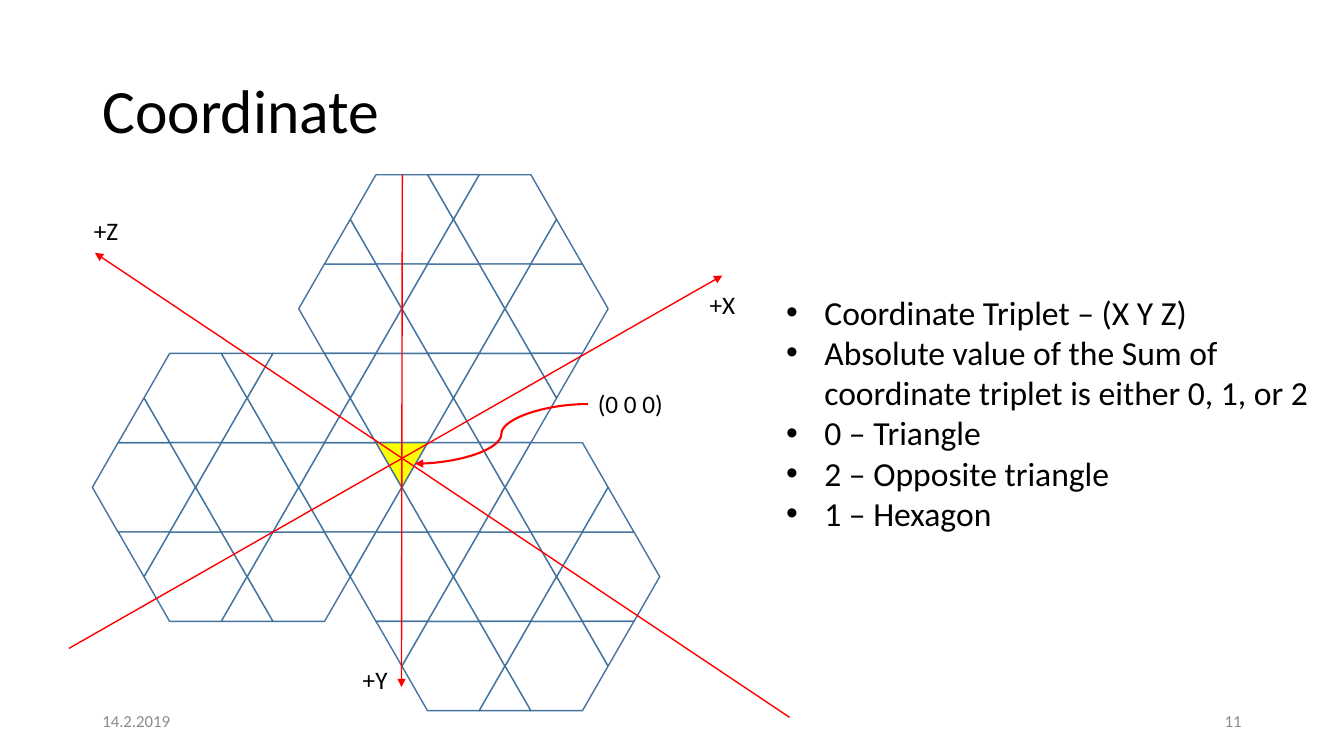
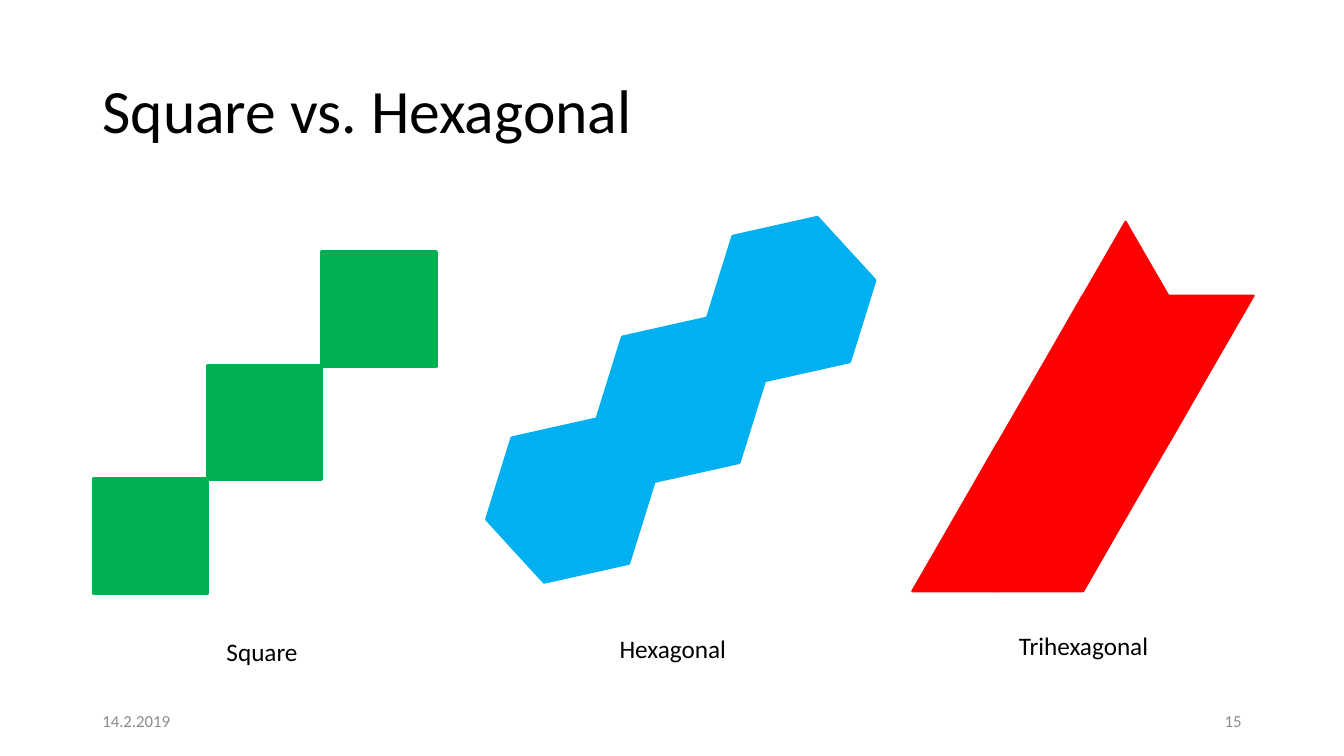
from dataclasses import dataclass
from math import sqrt
from typing import Any

from lxml.etree import SubElement
from pptx import Presentation
from pptx.dml.color import RGBColor
from pptx.enum.shapes import MSO_CONNECTOR as Link, MSO_SHAPE as Preset
from pptx.enum.text import MSO_ANCHOR as Anchor, MSO_AUTO_SIZE as Fit, PP_ALIGN as Align
from pptx.oxml.ns import qn
from pptx.util import Inches, Pt

COLUMNS, ROWS = 160, 90
CELL = Inches(7.5) / ROWS
FONT = "Calibri"
BLACK, GRAY, WHITE, STEEL = "000000", "8C8C8C", "FFFFFF", "43739E"
GREEN, SKY, RED, YELLOW = "00B050", "00B0F0", "FF0000", "FFFF00"
HEXAGON_INSET = 0.287
DATE = "14.2.2019"


@dataclass(frozen=True)
class Box:
    left: float
    top: float
    width: float
    height: float

    def emu(self) -> tuple[int, ...]:
        return tuple(grid(v) for v in (self.left, self.top, self.width, self.height))


@dataclass(frozen=True)
class Look:
    fill: str
    line: str
    weight: float


@dataclass(frozen=True)
class Tile:
    preset: Any
    column: int
    row: int
    turn: float = 0


@dataclass(frozen=True)
class Lattice:
    left: float
    top: float
    half_side: float

    def box(self, tile: Tile) -> Box:
        rise = self.half_side * sqrt(3)
        span = 2 if tile.preset == Preset.HEXAGON else 1
        return Box(self.left + tile.column * self.half_side, self.top + tile.row * rise,
                   2 * span * self.half_side, span * rise)


@dataclass(frozen=True)
class Arrow:
    start: tuple[float, float]
    end: tuple[float, float]
    kind: Any = Link.STRAIGHT
    weight: float = 1


@dataclass(frozen=True)
class Label:
    text: str
    box: Box
    wrap: bool = True
    align: Any = Align.LEFT


@dataclass(frozen=True)
class Staircase:
    preset: Any
    first: Box
    step: tuple[float, float]
    look: Look
    turn: float = 0


def hexagons(*places: tuple[int, int]) -> list[Tile]:
    return [Tile(Preset.HEXAGON, *place) for place in places]


def triangles(turn: float, *places: tuple[int, int]) -> list[Tile]:
    return [Tile(Preset.ISOSCELES_TRIANGLE, *place, turn) for place in places]


FLOWER = (
    hexagons((2, 0), (6, 0), (0, 2), (4, 2), (8, 2), (2, 4), (6, 4))
    + triangles(0, (1, 1), (5, 1), (9, 1), (3, 3), (7, 3), (5, 5))
    + triangles(180, (5, 0), (3, 2), (7, 2), (1, 4), (5, 4), (9, 4))
)
FLOWER_ORIGINS = ((0, 4), (8, 0), (10, 6))
MAP_LATTICE = Lattice(11, 20.8, 3.07)
ORIGIN_TILE = Tile(Preset.ISOSCELES_TRIANGLE, 11, 6, 180)
AXES = (
    Arrow((94, 85.4), (11.3, 30.1)),
    Arrow((8.2, 77.2), (86, 32.8)),
    Arrow((47.9, 20.8), (47.8, 81.8)),
)
ORIGIN_POINTER = Arrow((70, 48.1), (49.4, 55.2), Link.CURVE, 1.5)
MAP_LABELS = (
    Label("+Y", Box(42, 78.5, 5.4, 4.8), False),
    Label("+X", Box(83.3, 33.8, 5.5, 4.8), False),
    Label("+Z", Box(10, 25, 5.4, 4.8), False),
    Label("(0 0 0)", Box(70, 45.7, 10.3, 4.8), False),
)
RULES = (
    "Coordinate Triplet – (X Y Z)",
    "Absolute value of the Sum of coordinate triplet is either 0, 1, or 2",
    "0 – Triangle",
    "2 – Opposite triangle",
    "1 – Hexagon",
)
STAIRCASES = (
    Staircase(Preset.RECTANGLE, Box(11.1, 57, 13.6, 13.6), (13.6, -13.5),
              Look(GREEN, GREEN, 2.25)),
    Staircase(Preset.HEXAGON, Box(57.7, 50.8, 20.4, 17.6), (13.15, -12),
              Look(SKY, SKY, 2.25), 347.4),
)
TRIHEX_LATTICE = Lattice(108.6, 26.4, 5.08)
TRIHEX_PATH = (
    hexagons((1, 3), (3, 1))
    + triangles(0, (4, 0), (2, 2), (0, 4))
    + triangles(180, (6, 1), (4, 3))
)
CAPTIONS = tuple(
    Label(text, Box(12.5 + 48.9 * i, 75.2 - 0.4 * i, 37.4, 4.8), align=Align.CENTER)
    for i, text in enumerate(("Square", "Hexagonal", "Trihexagonal"))
)


def grid(cells: float) -> int:
    return round(cells * CELL)


def paint(target: Any, color: str) -> None:
    if hasattr(target, "solid"):
        target.solid()
        target = target.fore_color
    target.rgb = RGBColor.from_string(color)


def assign(target: Any, values: dict[str, Any]) -> None:
    for name, value in values.items():
        setattr(target, name, value)


def write(frame: Any, lines: tuple[str, ...], size: float, color: str = BLACK,
          frame_format: dict[str, Any] | None = None,
          paragraph_format: dict[str, Any] | None = None) -> None:
    assign(frame, {"word_wrap": True, **(frame_format or {})})
    for i, line in enumerate(lines):
        paragraph = frame.add_paragraph() if i else frame.paragraphs[0]
        assign(paragraph, {"alignment": Align.LEFT, **(paragraph_format or {})})
        run = paragraph.add_run()
        run.text = line
        assign(run.font, {"name": FONT, "size": Pt(size)})
        paint(run.font.color, color)


def text_frame(slide: Any, box: Box) -> Any:
    return slide.shapes.add_textbox(*box.emu()).text_frame


def add_label(slide: Any, label: Label) -> None:
    write(text_frame(slide, label.box), (label.text,), 18,
          frame_format={"word_wrap": label.wrap, "auto_size": Fit.SHAPE_TO_FIT_TEXT},
          paragraph_format={"alignment": label.align})


def add_figure(slide: Any, preset: Any, box: Box, look: Look, turn: float = 0) -> None:
    figure = slide.shapes.add_shape(preset, *box.emu())
    figure.rotation = turn
    figure.shadow.inherit = False
    if preset == Preset.HEXAGON:
        figure.adjustments[0] = HEXAGON_INSET
    paint(figure.fill, look.fill)
    paint(figure.line.fill, look.line)
    figure.line.width = Pt(look.weight)


def add_tiles(slide: Any, lattice: Lattice, tiles: list[Tile], look: Look) -> None:
    for tile in tiles:
        add_figure(slide, tile.preset, lattice.box(tile), look, tile.turn)


def add_staircase(slide: Any, stairs: Staircase) -> None:
    first, (across, down) = stairs.first, stairs.step
    for i in range(3):
        box = Box(first.left + i * across, first.top + i * down, first.width, first.height)
        add_figure(slide, stairs.preset, box, stairs.look, stairs.turn)


def add_arrow(slide: Any, arrow: Arrow) -> None:
    ends = (grid(v) for v in (*arrow.start, *arrow.end))
    connector = slide.shapes.add_connector(arrow.kind, *ends)
    paint(connector.line.fill, RED)
    connector.line.width = Pt(arrow.weight)
    SubElement(connector.line._get_or_add_ln(), qn("a:tailEnd"), type="triangle")
    SubElement(connector._element.spPr, qn("a:effectLst"))


def add_bullets(slide: Any, box: Box, lines: tuple[str, ...]) -> None:
    frame = text_frame(slide, box)
    write(frame, lines, 24)
    indent = Inches(0.38)
    for paragraph in frame.paragraphs:
        properties = paragraph._p.get_or_add_pPr()
        properties.set("marL", str(indent))
        properties.set("indent", str(-indent))
        SubElement(properties, qn("a:buFont"), typeface="Arial")
        SubElement(properties, qn("a:buChar"), char="•")


def add_slide(deck: Any, title: str, number: str) -> Any:
    slide = deck.slides.add_slide(deck.slide_layouts[5])
    heading = slide.shapes.title
    assign(heading, dict(zip(("left", "top", "width", "height"),
                             Box(11, 4.8, 138, 17.4).emu())))
    write(heading.text_frame, (title,), 44,
          frame_format={"vertical_anchor": Anchor.MIDDLE, "auto_size": Fit.NONE},
          paragraph_format={"line_spacing": 0.9})
    for text, left, align in ((DATE, 11, Align.LEFT), (number, 113, Align.RIGHT)):
        write(text_frame(slide, Box(left, 83.4, 36, 4.8)), (text,), 12, GRAY,
              {"vertical_anchor": Anchor.MIDDLE}, {"alignment": align})
    return slide


def build_coordinate(deck: Any) -> None:
    slide = add_slide(deck, "Coordinate", "11")
    for column, row in FLOWER_ORIGINS:
        petals = [Tile(t.preset, t.column + column, t.row + row, t.turn) for t in FLOWER]
        add_tiles(slide, MAP_LATTICE, petals, Look(WHITE, STEEL, 1))
    add_tiles(slide, MAP_LATTICE, [ORIGIN_TILE], Look(YELLOW, STEEL, 1))
    for arrow in (*AXES, ORIGIN_POINTER):
        add_arrow(slide, arrow)
    for label in MAP_LABELS:
        add_label(slide, label)
    add_bullets(slide, Box(92.4, 34.1, 65.2, 35.2), RULES)


def build_comparison(deck: Any) -> None:
    slide = add_slide(deck, "Square vs. Hexagonal", "15")
    for caption in CAPTIONS:
        add_label(slide, caption)
    for stairs in STAIRCASES:
        add_staircase(slide, stairs)
    add_tiles(slide, TRIHEX_LATTICE, TRIHEX_PATH, Look(RED, RED, 1.5))


def main() -> None:
    deck = Presentation()
    assign(deck, {"slide_width": grid(COLUMNS), "slide_height": grid(ROWS)})
    build_coordinate(deck)
    build_comparison(deck)
    deck.save("out.pptx")


if __name__ == "__main__":
    main()
